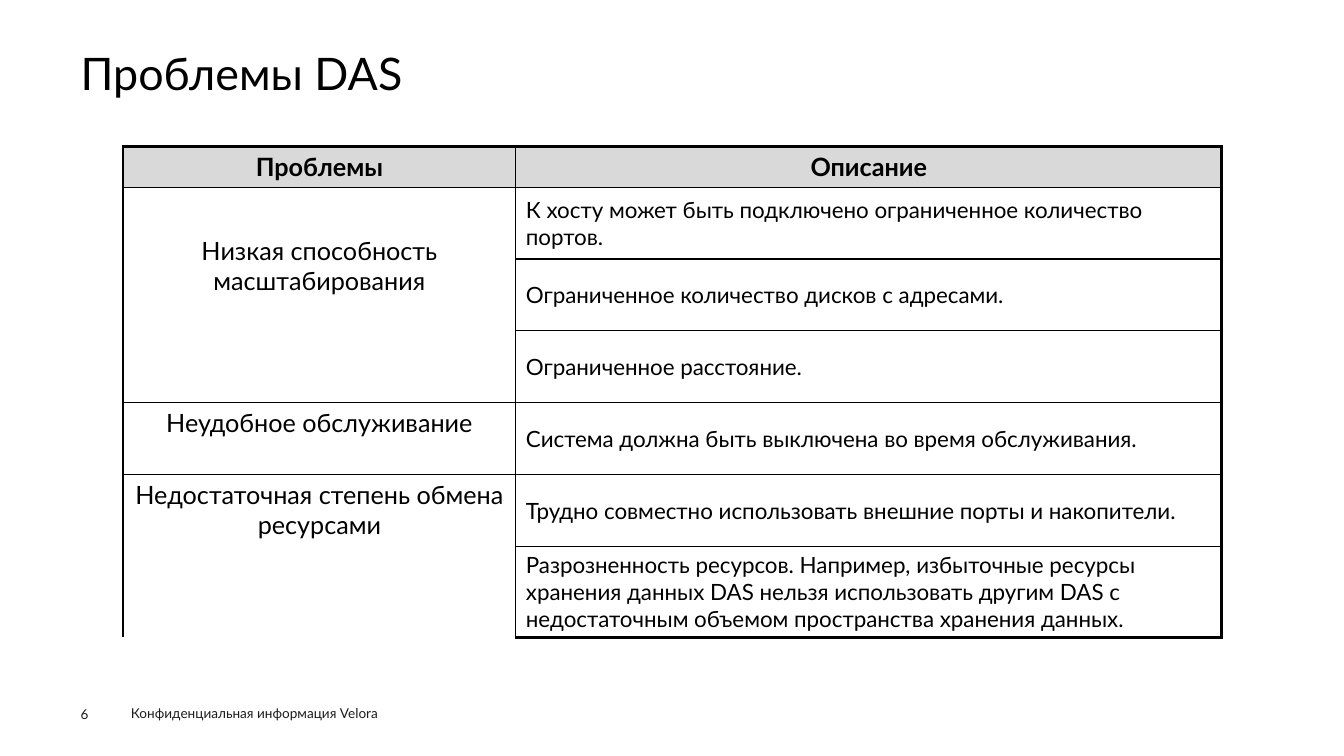
from dataclasses import dataclass

from lxml.etree import SubElement
from pptx import Presentation
from pptx.dml.color import RGBColor as Rgb
from pptx.enum.text import MSO_ANCHOR as Anchor
from pptx.enum.text import MSO_AUTO_SIZE as Fit
from pptx.enum.text import PP_ALIGN as Align
from pptx.oxml.ns import qn
from pptx.util import Cm, Pt


@dataclass(frozen=True)
class Theme:
    font: str = "Lato"
    ink: str = "000000"
    soft: str = "1D1D1B"
    head: str = "D9D9D9"
    title: float = 32
    label: float = 18
    body: float = 16
    foot: float = 9.7
    thick: float = 2.25
    thin: float = 1


THEME = Theme()
HEADS = ("Проблемы", "Описание")
# Problem, space above its name in cm, descriptions
GROUPS = (
    ("Низкая способность масштабирования", 1.21, (
        "К хосту может быть подключено ограниченное количество портов.",
        "Ограниченное количество дисков с адресами.",
        "Ограниченное расстояние.")),
    ("Неудобное обслуживание", 0.13, (
        "Система должна быть выключена во время обслуживания.",)),
    ("Недостаточная степень обмена ресурсами", 0.13, (
        "Трудно совместно использовать внешние порты и накопители.",
        "Разрозненность ресурсов. Например, избыточные ресурсы хранения "
        "данных DAS нельзя использовать другим DAS с недостаточным объемом "
        "пространства хранения данных.")),
)
COLS = (9.9, 17.79)
ROWS = (1.0, 1.81, 1.81, 1.81, 1.81, 1.81, 2.29)


def write(frame, text, size, color=THEME.ink, bold=False, align=Align.LEFT):
    para = frame.paragraphs[0]
    para.alignment = align
    run = para.add_run()
    run.text = text
    font = run.font
    font.name, font.size, font.bold = THEME.font, Pt(size), bold
    font.color.rgb = Rgb.from_string(color)
    return para


def clear(frame):
    """Remove the inner margins of a text frame."""
    frame.margin_left = frame.margin_right = 0
    frame.margin_top = frame.margin_bottom = 0


def rule(cell, sides):
    """Draw cell borders; sides maps L, R, T, B to a width or None."""
    props = cell._tc.get_or_add_tcPr()
    for side in "LRTB":
        width = sides[side]
        if width:
            line = SubElement(props, qn("a:ln" + side), w=str(Pt(width)))
            fill = SubElement(line, qn("a:solidFill"))
            SubElement(fill, qn("a:srgbClr"), val=THEME.ink)


def frame_cells(table):
    """Rule the grid: thick outside, thin inside, none within a merged cell."""
    end = len(ROWS) - 1
    starts = {0, 1}
    for _, _, notes in GROUPS:
        starts.add(max(starts) + len(notes))
    for row in range(len(ROWS)):
        for col in range(len(COLS)):
            cell = table.cell(row, col)
            top = THEME.thin if col or row in starts else None
            base = THEME.thin if col or row + 1 in starts else None
            rule(cell, {
                "L": THEME.thin if col else THEME.thick,
                "R": THEME.thick if col else THEME.thin,
                "T": top if row else THEME.thick,
                "B": base if row < end else THEME.thick,
            })
            if row:
                cell.fill.background()
            else:
                cell.fill.solid()
                cell.fill.fore_color.rgb = Rgb.from_string(THEME.head)


def add_title(slide, left, top, width, height):
    title = slide.shapes.title
    title.left, title.top, title.width, title.height = left, top, width, height
    frame = title.text_frame
    clear(frame)
    frame.auto_size = Fit.NONE
    frame.vertical_anchor = Anchor.MIDDLE
    write(frame, "Проблемы DAS", THEME.title).line_spacing = 0.9


def add_grid(slide, left, top, width, height):
    table = slide.shapes.add_table(
        len(ROWS), len(COLS), left, top, width, height).table
    table.horz_banding = False
    for col, size in zip(table.columns, COLS):
        col.width = Cm(size)
    for row, size in zip(table.rows, ROWS):
        row.height = Cm(size)
    frame_cells(table)

    for col, text in enumerate(HEADS):
        cell = table.cell(0, col)
        cell.vertical_anchor = Anchor.MIDDLE
        write(cell.text_frame, text, THEME.label, bold=True,
              align=Align.CENTER)

    row = 1
    for name, space, notes in GROUPS:
        cell = table.cell(row, 0)
        if len(notes) > 1:
            cell.merge(table.cell(row + len(notes) - 1, 0))
        cell.vertical_anchor = Anchor.TOP
        cell.margin_top = Cm(space)
        write(cell.text_frame, name, THEME.label, align=Align.CENTER)
        for note in notes:
            cell = table.cell(row, 1)
            cell.vertical_anchor = Anchor.MIDDLE
            write(cell.text_frame, note, THEME.body)
            row += 1


def add_footer(slide, left, top, width, height):
    num = slide.shapes.add_textbox(
        left, top + Cm(0.13), Cm(1.4), height - Cm(0.26)).text_frame
    clear(num)
    num.word_wrap = True
    write(num, "6", THEME.foot, THEME.soft)
    gap = Cm(1.02)
    note = slide.shapes.add_textbox(
        left + gap, top, width - gap, height).text_frame
    note.word_wrap = True
    write(note, "Конфиденциальная информация Velora", THEME.foot, THEME.soft)


def main():
    deck = Presentation()
    deck.slide_width, deck.slide_height = Cm(33.87), Cm(19.05)
    slide = deck.slides.add_slide(deck.slide_layouts[5])
    add_footer(slide, Cm(2.03), Cm(17.65), Cm(9.38), Cm(0.66))
    add_title(slide, Cm(2.03), Cm(1.24), Cm(29.8), Cm(1.37))
    add_grid(slide, Cm(3.1), Cm(3.7), Cm(sum(COLS)), Cm(sum(ROWS)))
    deck.save("out.pptx")


if __name__ == "__main__":
    main()
